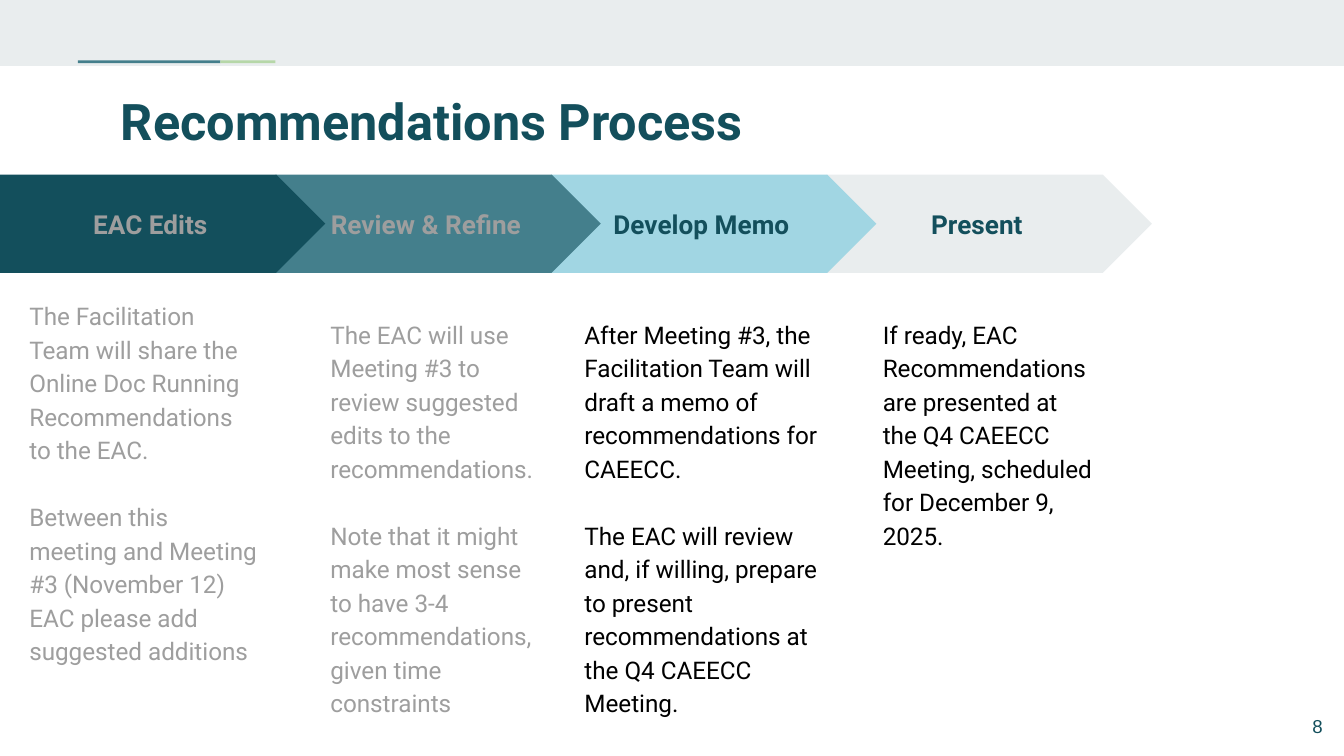
from pptx import Presentation
from pptx.util import Inches, Pt
from pptx.dml.color import RGBColor
from pptx.enum.shapes import MSO_SHAPE
from pptx.enum.text import MSO_ANCHOR, MSO_AUTO_SIZE, PP_ALIGN

NAVY, TEAL, SKY, PALE = "134F5C", "447F8C", "A1D6E3", "E9EDEE"
GREEN, GREY, BLACK = "B6D7A8", "9E9E9E", "000000"

HEAD = {"size": Pt(14), "bold": True, "name": "Roboto"}
BODY = {"size": Pt(13), "bold": False, "name": "Roboto"}
TITLE = {"size": Pt(27), "bold": True, "name": "Roboto"}
NUMBER = {"size": Pt(10), "bold": False, "name": "Arial"}

STEP, WIDE, TALL = 2.05, 2.42, 0.73  # arrow pitch and size

# label, fill, label colour, text colour, text box (x, y, width) in the step, text
STEPS = [
    ("EAC Edits", NAVY, GREY, GREY, (0.12, 0.81, 1.91), [
        "The Facilitation Team will share the Online Doc Running "
        "Recommendations to the EAC.",
        "Between this meeting and Meeting #3 (November 12) EAC please add "
        "suggested additions"]),
    ("Review & Refine", TEAL, GREY, GREY, (0.31, 0.95, 1.78), [
        "The EAC will use Meeting #3 to review suggested edits to the "
        "recommendations.",
        "Note that it might make most sense to have 3-4 recommendations, "
        "given time constraints"]),
    ("Develop Memo", SKY, NAVY, BLACK, (0.15, 0.95, 2.12), [
        "After Meeting #3, the Facilitation Team will draft a memo of "
        "recommendations for CAEECC.",
        "The EAC will review and, if willing, prepare to present "
        "recommendations at the Q4 CAEECC Meeting."]),
    ("Present", PALE, NAVY, BLACK, (0.32, 0.95, 1.78), [
        "If ready, EAC Recommendations are presented at the Q4 CAEECC "
        "Meeting, scheduled for December 9, 2025."]),
]


def color(code):
    return RGBColor.from_string(code)


def write(shape, texts, look, code, align=PP_ALIGN.LEFT,
          anchor=MSO_ANCHOR.TOP, lines=1.0, gap=0):
    frame = shape.text_frame
    setup = {"word_wrap": True, "auto_size": MSO_AUTO_SIZE.NONE,
             "vertical_anchor": anchor}
    for side in ("left", "right", "top", "bottom"):
        setup["margin_" + side] = Inches(0.1)
    for key, value in setup.items():
        setattr(frame, key, value)
    for i, text in enumerate(texts):
        para = frame.add_paragraph() if i else frame.paragraphs[0]
        para.alignment, para.line_spacing = align, lines
        para.space_before = Pt(gap if i else 0)
        run = para.add_run()
        run.text = text
        for key, value in look.items():
            setattr(run.font, key, value)
        run.font.color.rgb = color(code)


def add_block(slide, kind, box, fill):
    shape = slide.shapes.add_shape(kind, *map(Inches, box))
    shape.shadow.inherit = False
    shape.fill.solid()
    shape.fill.fore_color.rgb = color(fill)
    shape.line.fill.background()
    return shape


def add_text(slide, box, texts, look, code, **extra):
    write(slide.shapes.add_textbox(*map(Inches, box)), texts, look, code, **extra)


def add_banner(slide, x, y, w, h):
    add_block(slide, MSO_SHAPE.RECTANGLE, (x, y, w, h), PALE)
    # Two-tone accent line
    for left, width, fill in ((0.58, 1.06, TEAL), (1.64, 0.41, GREEN)):
        add_block(slide, MSO_SHAPE.RECTANGLE,
                  (x + left, y + h - 0.04, width, 0.02), fill)


def add_title(slide, x, y, w, h):
    title = slide.shapes.title
    box = map(Inches, (x, y, w, h))
    for key, value in zip(("left", "top", "width", "height"), box):
        setattr(title, key, value)
    write(title, ["Recommendations Process"], TITLE, NAVY)


def add_step(slide, x, y, w, h, step):
    label, fill, ink, tone, (left, top, width), texts = step
    arrow = add_block(slide, MSO_SHAPE.PENTAGON, (x, y, w, h), fill)
    write(arrow, [label], HEAD, ink,
          align=PP_ALIGN.CENTER, anchor=MSO_ANCHOR.MIDDLE)
    # The gap between paragraphs is one line of text
    add_text(slide, (x + left, y + top, width, 2.57), texts, BODY, tone,
             lines=1.15, gap=18)


def add_process(slide, x, y):
    # Last step first, so each arrow tip lies over the next arrow
    for i, step in reversed(list(enumerate(STEPS))):
        add_step(slide, x + i * STEP, y, WIDE, TALL, step)


def main():
    deck = Presentation()
    # Widescreen, 16 to 9
    deck.slide_width, deck.slide_height = Inches(10), Inches(10 * 9 / 16)
    slide = deck.slides.add_slide(deck.slide_layouts[5])
    add_banner(slide, 0, 0, 10, 0.49)
    add_title(slide, 0.8, 0.57, 8.41, 0.59)
    add_process(slide, 0, 1.3)
    # Page number
    add_text(slide, (9.34, 5.19, 0.6, 0.43), ["8"], NUMBER, NAVY,
             align=PP_ALIGN.RIGHT, anchor=MSO_ANCHOR.MIDDLE)
    deck.save("out.pptx")


if __name__ == "__main__":
    main()
